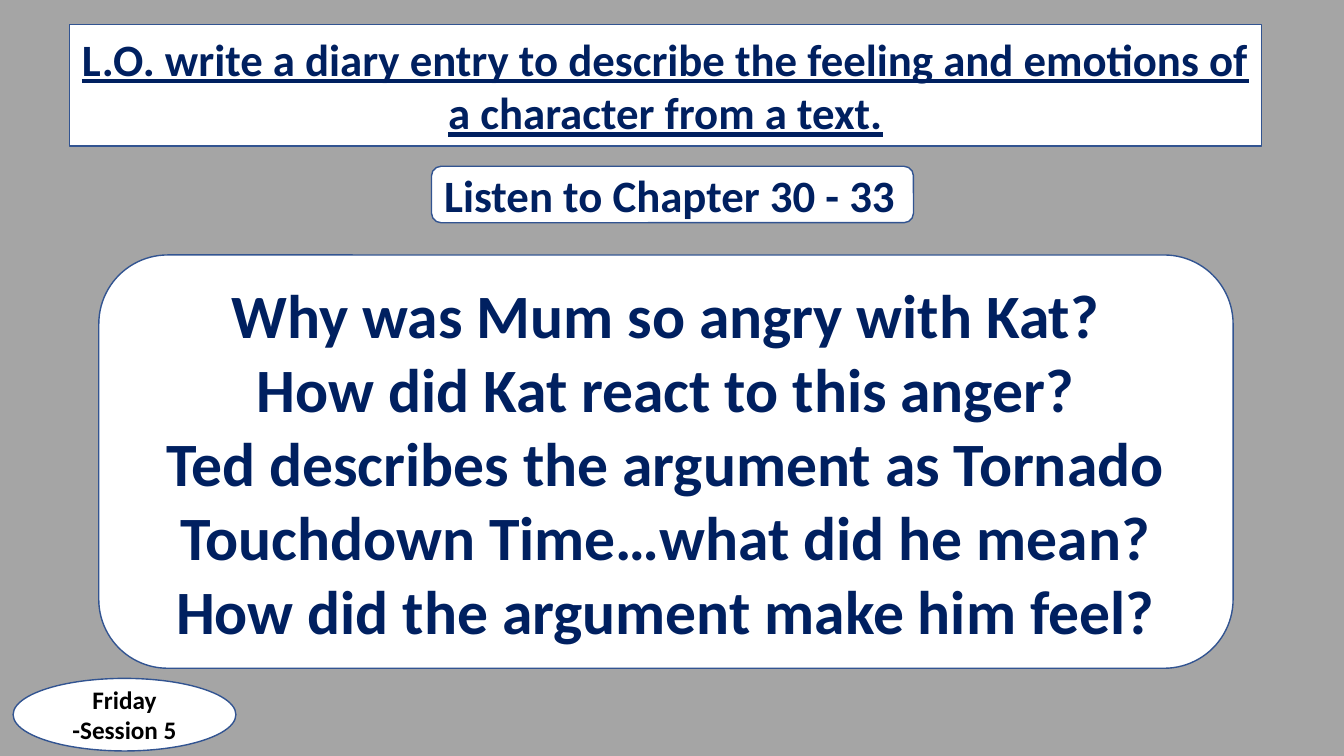
from pptx import Presentation
from pptx.dml.color import RGBColor
from pptx.enum.shapes import MSO_SHAPE as Preset
from pptx.enum.text import MSO_ANCHOR as Anchor, MSO_AUTO_SIZE as AutoSize, PP_ALIGN as Align
from pptx.util import Inches, Pt

WHITE, NAVY, BLUE, GREY, BLACK = "FFFFFF", "002060", "325491", "A5A5A5", "000000"


def colour(fill, value):
    fill.solid()
    fill.fore_color.rgb = RGBColor.from_string(value)


def write_panel(shape, lines, size, text_colour=NAVY, align=Align.CENTER, space_after=0, underline=False):
    colour(shape.fill, WHITE)
    colour(shape.line.fill, BLUE)
    shape.line.width = Pt(1)
    frame = shape.text_frame
    frame_format = {"word_wrap": True, "auto_size": AutoSize.NONE, "vertical_anchor": Anchor.MIDDLE}
    for name, value in frame_format.items():
        setattr(frame, name, value)
    frame.text = "\n".join(lines)
    font_format = {"name": "Calibri", "size": Pt(size), "bold": True, "underline": underline}
    for paragraph in frame.paragraphs:
        paragraph.alignment = align
        paragraph.space_after = Pt(space_after)
        for run in paragraph.runs:
            for name, value in font_format.items():
                setattr(run.font, name, value)
            colour(run.font.fill, text_colour)


# Slide with a grey background
presentation = Presentation()
presentation.slide_width, presentation.slide_height = Inches(13.33), Inches(7.5)
slide = presentation.slides.add_slide(presentation.slide_layouts[5])
colour(slide.background.fill, GREY)

# Learning objective
title = slide.shapes.title
title_place = {"left": 0.69, "top": 0.24, "width": 11.82, "height": 1.21}
for side, length in title_place.items():
    setattr(title, side, Inches(length))
objective = "L.O. write a diary entry to describe the feeling and emotions of a character from a text."
write_panel(title, [objective], 32, underline=True)

# Session label, chapter instruction and discussion questions
questions = [
    "Why was Mum so angry with Kat?",
    "How did Kat react to this anger?",
    "Ted describes the argument as Tornado Touchdown Time…what did he mean?",
    "How did the argument make him feel?",
]
panels = [
    (Preset.OVAL, (0.13, 6.73, 2.21, 0.72), ["Friday -Session 5"],
     {"size": 18, "text_colour": BLACK, "space_after": 6}),
    (Preset.ROUNDED_RECTANGLE, (4.28, 1.65, 4.78, 0.56), ["Listen to Chapter 30 - 33"],
     {"size": 32, "align": Align.LEFT}),
    (Preset.ROUNDED_RECTANGLE, (0.98, 2.53, 11.25, 4.1), questions, {"size": 44}),
]
for preset, place, lines, text_format in panels:
    shape = slide.shapes.add_shape(preset, *map(Inches, place))
    shape.shadow.inherit = False
    write_panel(shape, lines, **text_format)

presentation.save("out.pptx")
